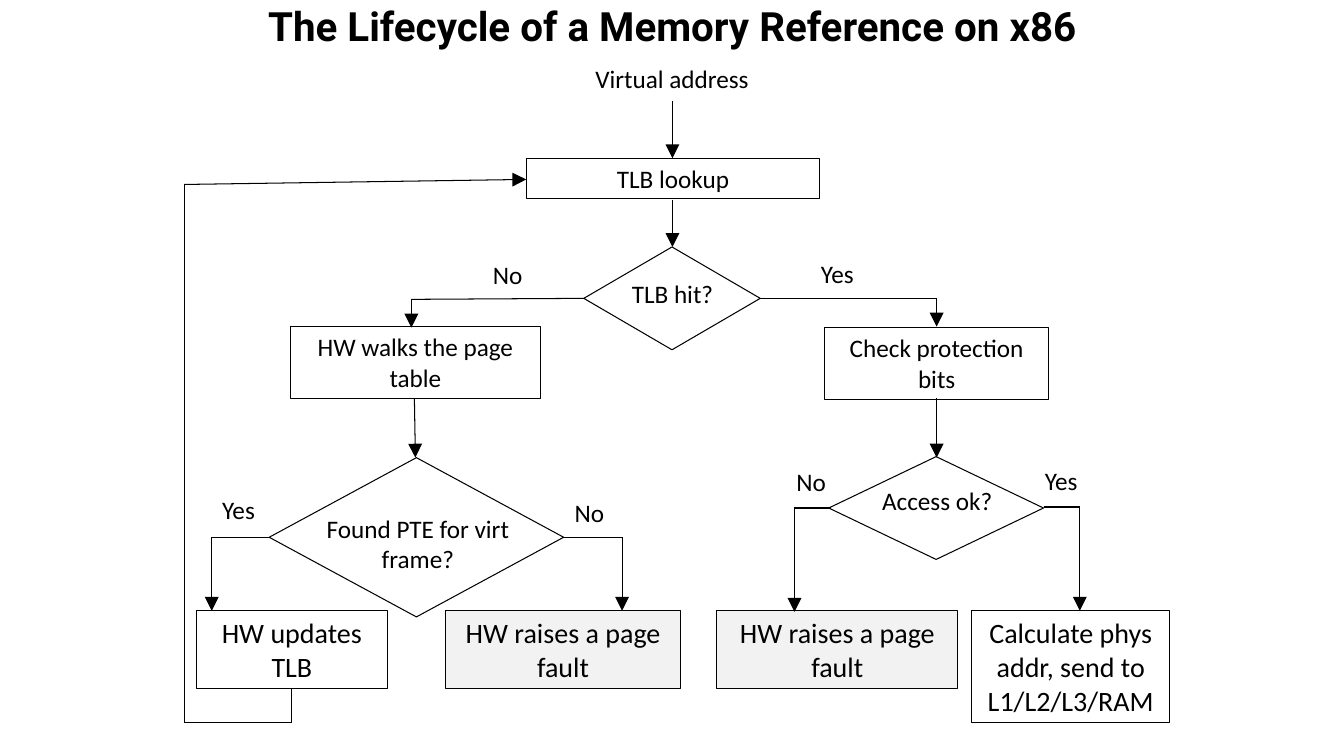
import itertools

import pptx
import pptx.util
from lxml import etree
from pptx.dml.color import RGBColor
from pptx.enum.shapes import MSO_CONNECTOR, MSO_SHAPE
from pptx.enum.text import MSO_ANCHOR, PP_ALIGN
from pptx.oxml.ns import qn
from pptx.util import Inches

COLORS = {"ink": "000000", "page": "FFFFFF", "fault": "F2F2F2"}
LINE_WIDTH = 0.75

TITLE = "The Lifecycle of a Memory Reference on x86"

# text, left, top, width, height, font size, fill
STEPS = [
    ("TLB lookup", 5.22, 1.57, 2.91, 0.4, 18, "page"),
    ("HW walks the page table", 2.88, 3.24, 2.48, 0.71, 18, "page"),
    ("Check protection bits", 8.18, 3.25, 2.22, 0.71, 18, "page"),
    ("HW updates TLB", 1.95, 6.06, 1.89, 0.77, 20, "page"),
    ("HW raises a page fault", 4.42, 6.06, 2.33, 0.77, 20, "fault"),
    ("HW raises a page fault", 7.11, 6.06, 2.39, 0.77, 20, "fault"),
    ("Calculate phys addr, send to L1/L2/L3/RAM", 9.64, 6.06, 1.96, 1.11, 20, "page"),
]

# left, top, width, height of the diamond, then its question and the question's place
DECISIONS = [
    ((5.79, 2.45, 1.75, 1.02), "TLB hit?", (5.86, 2.71, 1.62, 0.4)),
    ((8.22, 4.53, 2.13, 1.02), "Access ok?", (8.42, 4.77, 1.75, 0.4)),
    ((2.67, 4.54, 2.92, 1.58), "Found PTE for virt frame?", (3.03, 5.04, 2.23, 0.71)),
]

# answer, left, top
ANSWERS = [
    ("No", 4.64, 2.52),
    ("Yes", 7.91, 2.51),
    ("Yes", 1.97, 4.86),
    ("No", 5.45, 4.88),
    ("No", 7.65, 4.58),
    ("Yes", 10.13, 4.57),
]

# corner points of each route; the last leg ends in an arrowhead
ROUTES = [
    [(6.67, 1), (6.67, 1.57)],
    [(6.67, 1.98), (6.67, 2.45)],
    [(5.79, 2.96), (4.08, 2.97), (4.08, 3.25)],
    [(7.54, 2.96), (9.29, 2.96), (9.29, 3.24)],
    [(4.11, 3.95), (4.12, 4.54)],
    [(9.29, 3.95), (9.29, 4.54)],
    [(2.68, 5.33), (2.1, 5.33), (2.1, 6.06)],
    [(5.58, 5.33), (6.17, 5.33), (6.17, 6.06)],
    [(8.24, 5.04), (7.88, 5.04), (7.88, 6.07)],
    [(10.35, 5.03), (10.71, 5.03), (10.71, 6.06)],
    [(2.89, 6.84), (2.89, 7.17), (1.83, 7.17), (1.83, 1.83), (5.22, 1.78)],
]


def set_format(target, values):
    for name, value in values.items():
        setattr(target, name, value)


def write_text(box, text, size, font="Calibri", bold=False, anchor=MSO_ANCHOR.TOP):
    frame = box.text_frame
    set_format(frame, {"word_wrap": True, "vertical_anchor": anchor})
    para = frame.paragraphs[0]
    para.alignment = PP_ALIGN.CENTER
    span = para.add_run()
    span.text = text
    set_format(span.font, {"name": font, "size": pptx.util.Pt(size), "bold": bold})
    span.font.color.rgb = RGBColor.from_string(COLORS["ink"])
    return para


def style_line(line):
    line.color.rgb = RGBColor.from_string(COLORS["ink"])
    line.width = pptx.util.Pt(LINE_WIDTH)


def add_title(page):
    title = page.shapes.title
    set_format(title, {"left": Inches(1.67), "top": Inches(0),
                       "width": Inches(10), "height": Inches(0.57)})
    para = write_text(title, TITLE, 28.8, "Roboto", True, MSO_ANCHOR.MIDDLE)
    para.line_spacing = 0.9


def add_label(page, text, place):
    box = page.shapes.add_textbox(*map(Inches, place))
    write_text(box, text, 18)


def add_outline(page, kind, place, fill):
    shape = page.shapes.add_shape(kind, *map(Inches, place))
    shape.shadow.inherit = False
    shape.fill.solid()
    shape.fill.fore_color.rgb = RGBColor.from_string(COLORS[fill])
    style_line(shape.line)
    return shape


def add_route(page, points):
    """Join the points with straight legs and point the last one at its target."""
    for start, end in itertools.pairwise(points):
        leg = page.shapes.add_connector(
            MSO_CONNECTOR.STRAIGHT, *map(Inches, start + end))
        style_line(leg.line)
        etree.SubElement(leg._element.spPr, qn("a:effectLst"))
    etree.SubElement(leg.line._get_or_add_ln(), qn("a:tailEnd"),
                     type="triangle", w="lg", len="lg")


def main():
    deck = pptx.Presentation()
    set_format(deck, {"slide_width": Inches(13.33), "slide_height": Inches(7.5)})
    page = deck.slides.add_slide(deck.slide_layouts[5])
    add_title(page)
    add_label(page, "Virtual address", (5.21, 0.58, 2.91, 0.4))
    for diamond, question, place in DECISIONS:
        add_outline(page, MSO_SHAPE.FLOWCHART_DECISION, diamond, "page")
        add_label(page, question, place)
    for text, left, top, width, height, size, fill in STEPS:
        step = add_outline(page, MSO_SHAPE.RECTANGLE, (left, top, width, height), fill)
        write_text(step, text, size)
    for route in ROUTES:
        add_route(page, route)
    for answer, left, top in ANSWERS:
        add_label(page, answer, (left, top, 0.79, 0.4))
    deck.save("out.pptx")


if __name__ == "__main__":
    main()
